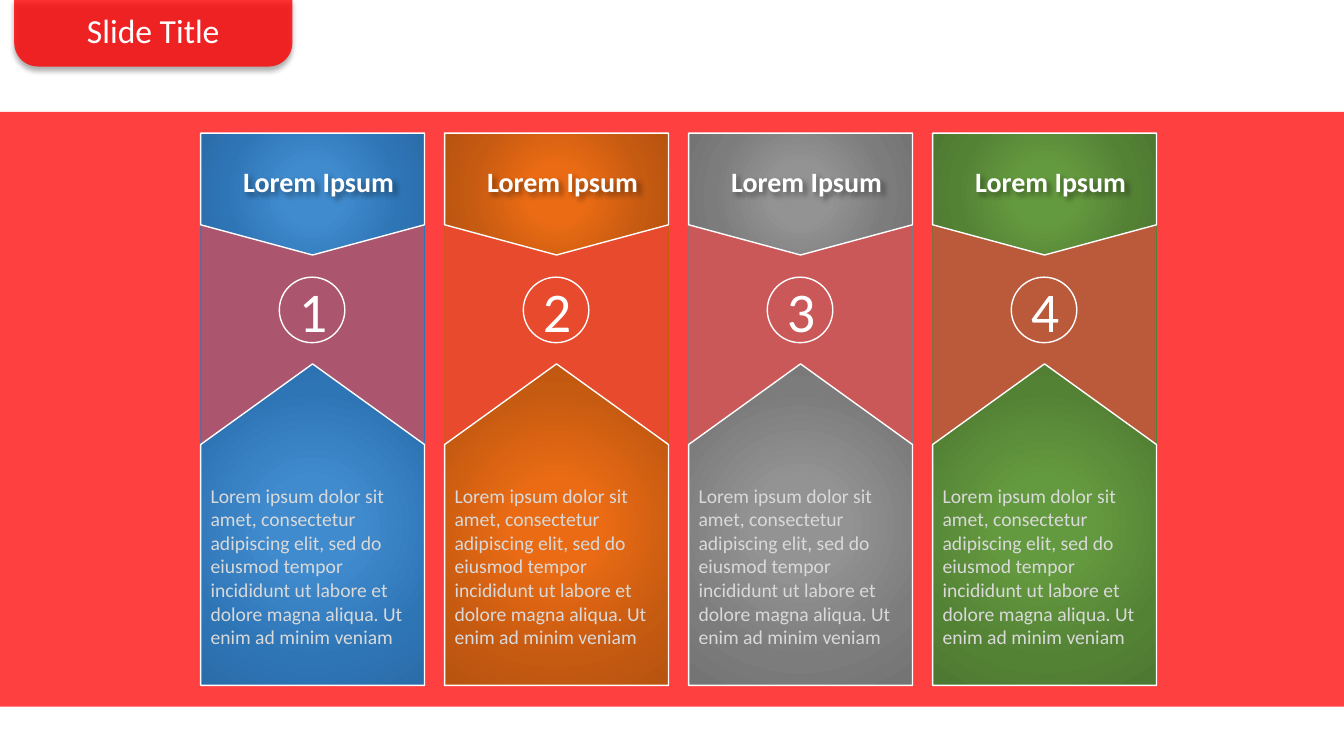
from dataclasses import dataclass

from lxml import etree
from pptx import Presentation
from pptx import util as u
from pptx.dml.color import RGBColor
from pptx.enum import shapes, text
from pptx.oxml import ns


@dataclass(frozen=True)
class Theme:
    font: str = "Calibri"
    red: str = "FF0000"
    white: str = "FFFFFF"
    body: str = "D9D9D9"
    shadow: str = "000000"
    title_size: int = 24
    heading_size: int = 20
    number_size: int = 40
    body_size: int = 14
    # inner, middle and outer tone of each column
    columns: tuple = (
        ("408BCE", "2E75B6", "2B6DA9"),
        ("EA6B14", "C55A11", "B85410"),
        ("939393", "7C7C7C", "747474"),
        ("649A3F", "548235", "4E7932"),
    )


T = Theme()
HEADING = "Lorem Ipsum"
BODY = ("Lorem ipsum dolor sit amet, consectetur adipiscing elit, sed do "
        "eiusmod tempor incididunt ut labore et dolore magna aliqua. "
        "Ut enim ad minim veniam")
LEFT, PITCH, WIDTH = 1.99, 2.42, 2.22


def box(*lengths):
    return [u.Inches(v) for v in lengths]


def rgb(color):
    return RGBColor.from_string(color)


# Fills, lines and shadows
def fill_solid(sp, color, alpha):
    sp.fill.solid()
    sp.fill.fore_color.rgb = rgb(color)
    clr = sp._element.spPr.find(".//" + ns.qn("a:srgbClr"))
    etree.SubElement(clr, ns.qn("a:alpha"), val=str(alpha * 1000))


def fill_radial(sp, tones):
    inner, middle, outer = tones
    grad = etree.Element(ns.qn("a:gradFill"), rotWithShape="1")
    stops = etree.SubElement(grad, ns.qn("a:gsLst"))
    for pos, color in ((0, inner), (23, inner), (69, middle), (97, outer)):
        gs = etree.SubElement(stops, ns.qn("a:gs"), pos=str(pos * 1000))
        etree.SubElement(gs, ns.qn("a:srgbClr"), val=color)
    path = etree.SubElement(grad, ns.qn("a:path"))
    path.set("path", "circle")
    etree.SubElement(path, ns.qn("a:fillToRect"),
                     {side: "50000" for side in "ltrb"})
    sp.fill.background()
    no_fill = sp._element.spPr.find(ns.qn("a:noFill"))
    no_fill.getparent().replace(no_fill, grad)


def outline(sp, color, width):
    sp.line.color.rgb = rgb(color)
    sp.line.width = u.Pt(width)


def add_shadow(sp, angle):
    sp.shadow.inherit = False
    effects = sp._element.spPr.find(ns.qn("a:effectLst"))
    shadow = etree.SubElement(
        effects, ns.qn("a:outerShdw"), blurRad=str(u.Pt(4)),
        dist=str(u.Pt(3)), dir=str(angle * 60000), algn="t", rotWithShape="0")
    clr = etree.SubElement(shadow, ns.qn("a:srgbClr"), val=T.shadow)
    etree.SubElement(clr, ns.qn("a:alpha"), val="40000")


# Shapes and text
def add_preset(s, kind, at):
    sp = s.shapes.add_shape(kind, *box(*at))
    sp.shadow.inherit = False
    sp.line.fill.background()
    return sp


def add_polygon(s, points):
    start, *rest = [box(*point) for point in points]
    builder = s.shapes.build_freeform(*start)
    builder.add_line_segments(rest, close=True)
    sp = builder.convert_to_shape()
    sp.shadow.inherit = False
    return sp


def write(sp, words, size, color, align=text.PP_ALIGN.CENTER, bold=False):
    tf = sp.text_frame
    tf.word_wrap = True
    tf.text = words
    p = tf.paragraphs[0]
    p.alignment = align
    r = p.runs[0]
    r.font.name = T.font
    r.font.size = u.Pt(size)
    r.font.bold = bold
    r.font.color.rgb = rgb(color)


def add_text(s, at, words, size, color, **style):
    sp = s.shapes.add_textbox(*box(*at))
    write(sp, words, size, color, **style)
    sp.text_frame.auto_size = text.MSO_AUTO_SIZE.SHAPE_TO_FIT_TEXT
    return sp


# One numbered column
def add_column(s, index, tones):
    x = LEFT + index * PITCH
    mid, right = x + WIDTH / 2, x + WIDTH

    band = add_polygon(s, [(x, 1.95), (x, 2.2), (mid, 2.53), (right, 2.2),
                           (right, 4.59), (mid, 3.71), (x, 4.59)])
    fill_solid(band, tones[1], 40)
    outline(band, tones[1], 0.5)

    ring = add_preset(s, shapes.MSO_SHAPE.OVAL,
                      (mid - 0.33, 2.75, 0.65, 0.65))
    ring.fill.background()
    outline(ring, T.white, 1)
    write(ring, str(index + 1), T.number_size, T.white)
    ring.text_frame.vertical_anchor = text.MSO_ANCHOR.MIDDLE

    header = [(x, 1.32), (right, 1.32), (right, 2.23), (mid, 2.53), (x, 2.23)]
    panel = [(x, 6.8), (x, 4.41), (mid, 3.61), (right, 4.41), (right, 6.8)]
    for points in (header, panel):
        sp = add_polygon(s, points)
        fill_radial(sp, tones)
        outline(sp, T.white, 1)

    heading = add_text(s, (x + 0.06, 1.58, WIDTH, 0.44), HEADING,
                       T.heading_size, T.white, bold=True)
    add_shadow(heading, 45)
    add_text(s, (x, 4.75, WIDTH, 1.75), BODY, T.body_size, T.body,
             align=text.PP_ALIGN.LEFT)


# Title on its red tab
def add_title(s):
    tab = add_preset(s, shapes.MSO_SHAPE.ROUND_2_SAME_RECTANGLE,
                     (0.14, -0.01, 2.76, 0.67))
    tab.adjustments[0] = 0.352
    tab.rotation = 180
    fill_solid(tab, T.red, 80)
    add_shadow(tab, 90)

    title = s.shapes.title
    title.left, title.top, title.width, title.height = box(
        0.14, 0.05, 2.76, 0.5)
    write(title, "Slide Title", T.title_size, T.white)
    title.text_frame.auto_size = text.MSO_AUTO_SIZE.NONE
    title.text_frame.vertical_anchor = text.MSO_ANCHOR.TOP
    tab._element.addnext(title._element)


def main():
    prs = Presentation()
    prs.slide_width, prs.slide_height = box(13.33, 7.5)
    s = prs.slides.add_slide(prs.slide_layouts[5])

    backdrop = add_preset(s, shapes.MSO_SHAPE.RECTANGLE,
                          (0, 1.11, 13.33, 5.9))
    fill_solid(backdrop, T.red, 75)
    for index, tones in enumerate(T.columns):
        add_column(s, index, tones)
    add_title(s)
    prs.save("out.pptx")


if __name__ == "__main__":
    main()
